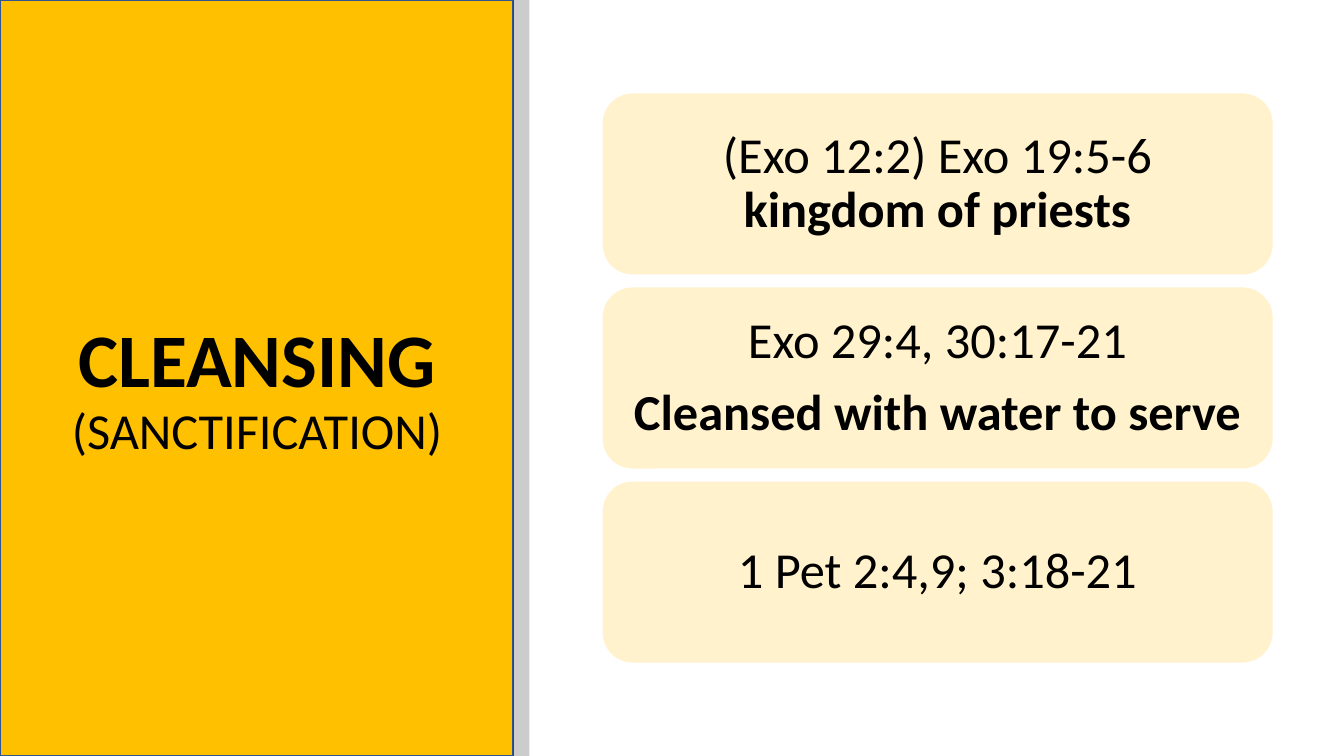
import pptx
import pptx.dml.color
import pptx.enum.shapes
import pptx.enum.text
import pptx.oxml.ns
import pptx.util
from lxml import etree

Inches = pptx.util.Inches
Pt = pptx.util.Pt
Shapes = pptx.enum.shapes.MSO_SHAPE

BODY = {"name": "Calibri", "size": Pt(36), "bold": False}
BOLD = {**BODY, "bold": True}
HEADING = {**BOLD, "size": Pt(54)}
HEADING_GAP = {**BODY, "size": Pt(60)}
LINE_BREAK = None

TITLE = [[("CLEANSING", HEADING), (" ", HEADING_GAP), ("(SANCTIFICATION)", BODY)]]
CARDS = [
    [[("(Exo 12:2) Exo 19:5-6", BODY), LINE_BREAK, ("kingdom of priests", BOLD)]],
    [[("Exo 29:4, 30:17-21", BODY)], [("Cleansed with water to serve", BOLD)]],
    [[("1 Pet 2:4,9; 3:18-21", BODY)]],
]


def color(hex_string):
    return pptx.dml.color.RGBColor.from_string(hex_string)


def add_panel(page, kind, box, fill, line=None):
    """Add a filled shape in box (left, top, width, height in inches)."""
    shape = page.shapes.add_shape(kind, *map(Inches, box))
    shape.shadow.inherit = False
    shape.fill.solid()
    shape.fill.fore_color.rgb = color(fill)
    if line:
        shape.line.color.rgb = color(line)
        shape.line.width = Pt(1)
    else:
        shape.line.fill.background()
    return shape


def write_text(frame, paragraphs, margins, space_after):
    """Fill a frame with centred paragraphs made of (text, format) spans."""
    frame_format = {"word_wrap": True, "vertical_anchor": pptx.enum.text.MSO_ANCHOR.MIDDLE}
    for side, margin in zip(("left", "top", "right", "bottom"), margins):
        frame_format[f"margin_{side}"] = Inches(margin)
    for name, value in frame_format.items():
        setattr(frame, name, value)

    para_format = {"alignment": pptx.enum.text.PP_ALIGN.CENTER, "line_spacing": 0.9,
                   "space_before": Pt(0), "space_after": Pt(space_after)}
    for index, spans in enumerate(paragraphs):
        para = frame.add_paragraph() if index else frame.paragraphs[0]
        for name, value in para_format.items():
            setattr(para, name, value)
        for span in spans:
            if span is LINE_BREAK:
                para.add_line_break()
                continue
            text, font_format = span
            run = para.add_run()
            run.text = text
            run.font.color.rgb = color("000000")
            for name, value in font_format.items():
                setattr(run.font, name, value)


def add_title_panel(page, box):
    """Add the yellow panel, its title and the grey strip along its right edge."""
    left, top, width, height = box
    add_panel(page, Shapes.RECTANGLE, box, "FFC000", "325491")
    title = page.shapes.add_textbox(
        *map(Inches, (left + 0.53, top + 0.89, width - 1.05, height - 1.59)))
    write_text(title.text_frame, TITLE, (0.1, 0.05, 0.1, 0.05), 0)

    strip = add_panel(page, Shapes.RECTANGLE, (left + width, top, 0.16, height), "000000")
    strip_color = strip.fill._xPr.find(".//" + pptx.oxml.ns.qn("a:srgbClr"))
    etree.SubElement(strip_color, pptx.oxml.ns.qn("a:alpha"), val="20000")


def add_cards(page, box, gap=0.115):
    """Stack equal rounded cards from top to bottom of box."""
    left, top, width, height = box
    card_height = (height - gap * (len(CARDS) - 1)) / len(CARDS)
    for index, paragraphs in enumerate(CARDS):
        card_top = top + index * (card_height + gap)
        card = add_panel(page, Shapes.ROUNDED_RECTANGLE,
                         (left, card_top, width, card_height), "FFF2CC", "FFFFFF")
        write_text(card.text_frame, paragraphs, (0.15,) * 4, 12.6)


def main():
    deck = pptx.Presentation()
    deck.slide_width = Inches(13.33)
    deck.slide_height = Inches(7.5)
    page = deck.slides.add_slide(deck.slide_layouts[6])
    add_title_panel(page, (0, 0, 5.09, 7.5))
    add_cards(page, (5.97, 0.92, 6.66, 5.66))
    deck.save("out.pptx")


if __name__ == "__main__":
    main()
